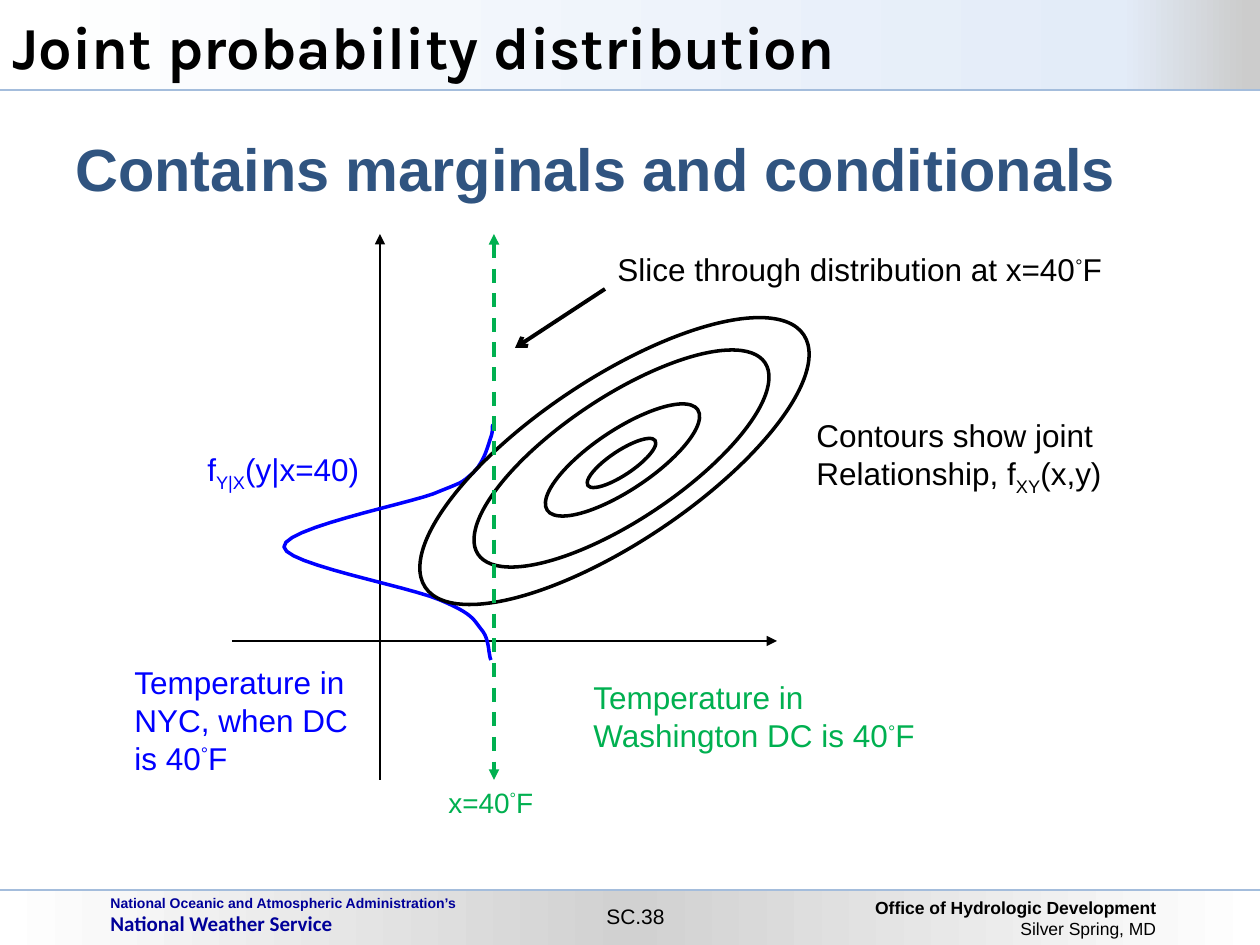
from copy import deepcopy

from lxml import etree
from pptx import Presentation
from pptx import util as u
from pptx.dml.color import RGBColor
from pptx.enum import dml, shapes, text
from pptx.oxml.ns import qn

SCALE = u.Inches(1) / 126
BLACK, BLUE, GREEN, NAVY = "000000", "0000FF", "00B050", "000099"
SUPER, SUB = 30000, -25000
DEGREES_F = [("°", {"baseline": SUPER}), ("F", {})]


def px(value):
    return u.Emu(round(value * SCALE))


def place(box, left, top, width, height):
    """Turn a rectangle relative to box into EMU."""
    return px(box[0] + left), px(box[1] + top), px(width), px(height)


def colour(hex_value):
    return RGBColor.from_string(hex_value)


def write(frame, paragraphs, size, hex_value, align=text.PP_ALIGN.LEFT, **defaults):
    """Fill a frame; each paragraph is a list of (text, format values) runs."""
    for index, runs in enumerate(paragraphs):
        paragraph = frame.paragraphs[0] if index == 0 else frame.add_paragraph()
        paragraph.alignment = align
        for words, changes in runs:
            run = paragraph.add_run()
            run.text = words
            values = {"name": "Arial", "size": u.Pt(size), **defaults, **changes}
            baseline = values.pop("baseline", None)
            for name, value in values.items():
                setattr(run.font, name, value)
            run.font.color.rgb = colour(hex_value)
            if baseline:
                run._r.get_or_add_rPr().set("baseline", str(baseline))


def add_text(slide, where, paragraphs, size, hex_value, frame_format=None, **defaults):
    frame = slide.shapes.add_textbox(*where).text_frame
    values = {"word_wrap": False, "auto_size": text.MSO_AUTO_SIZE.SHAPE_TO_FIT_TEXT}
    for name, value in {**values, **(frame_format or {})}.items():
        setattr(frame, name, value)
    write(frame, paragraphs, size, hex_value, **defaults)


def add_line(slide, box, start, end, hex_value, width, head=None, tail=None, dash=None):
    ends = [px(offset + value) for point in (start, end) for offset, value in zip(box, point)]
    connector = slide.shapes.add_connector(shapes.MSO_CONNECTOR.STRAIGHT, *ends)
    connector.line.color.rgb = colour(hex_value)
    connector.line.width = u.Pt(width)
    if dash:
        connector.line.dash_style = dash
    outline = connector.line._get_or_add_ln()
    for tag, kind in (("a:headEnd", head), ("a:tailEnd", tail)):
        if kind:
            etree.SubElement(outline, qn(tag)).set("type", kind)
    etree.SubElement(connector._element.spPr, qn("a:effectLst"))


def add_band(slide, where, stops):
    """Add a borderless rectangle with a left-to-right gradient."""
    band = slide.shapes.add_shape(shapes.MSO_SHAPE.RECTANGLE, *where)
    band.shadow.inherit = False
    band.line.fill.background()
    band.fill.gradient()
    band.fill.gradient_angle = 0
    stop_list = band._element.spPr.find(qn("a:gradFill")).find(qn("a:gsLst"))
    while len(stop_list) < len(stops):
        stop_list.append(deepcopy(stop_list[-1]))
    for stop, (position, hex_value) in zip(band.fill.gradient_stops, stops):
        stop.position = position
        stop.color.rgb = colour(hex_value)


def add_footer(slide, box):
    width = box[2]
    add_line(slide, box, (width, 1), (0, 1), "A4BDDC", 0.75)
    add_band(slide, place(box, 0, 2, width, 55), [(0, "FFFFFF"), (0.5, "D1D1D1"), (1, "FFFFFF")])
    add_text(slide, place(box, 868, 2, 294, 55),
             [[("Office of Hydrologic Development", {"bold": True})], [("Silver Spring, MD", {})]],
             10, BLACK, {"word_wrap": True, "auto_size": text.MSO_AUTO_SIZE.NONE,
                         "margin_left": px(1), "margin_right": px(6)},
             align=text.PP_ALIGN.RIGHT)
    add_text(slide, place(box, 98, -1, 420, 54),
             [[("National Oceanic and Atmospheric Administration’s", {})],
              [("National Weather Service", {"name": "Calibri", "size": u.Pt(12)})]],
             8, NAVY, {"word_wrap": True}, bold=True)
    add_text(slide, place(box, 592, 8, 87, 38), [[("SC.38", {})]], 12, BLACK,
             align=text.PP_ALIGN.CENTER)


def add_header(slide, box):
    width, height = box[2:]
    add_band(slide, place(box, 0, 0, width, height),
             [(0, "FFFFFF"), (0.89, "E3ECF8"), (0.99, "CCCCCC")])
    add_line(slide, box, (width, height - 1), (0, height - 1), "A4BDDC", 0.75)


def add_title(slide, box):
    add_text(slide, place(box, 0, 0, *box[2:]), [[("Joint probability distribution", {})]],
             34, BLACK, {"word_wrap": True, "auto_size": text.MSO_AUTO_SIZE.NONE,
                         "vertical_anchor": text.MSO_ANCHOR.MIDDLE}, name="Karla", bold=True)


def add_body(slide, box):
    body = slide.shapes.add_shape(shapes.MSO_SHAPE.RECTANGLE, *place(box, 0, 0, *box[2:]))
    body.shadow.inherit = False
    body.fill.solid()
    body.fill.fore_color.rgb = colour("FFFFFF")
    body.line.fill.background()
    body.text_frame.vertical_anchor = text.MSO_ANCHOR.TOP
    write(body.text_frame, [[("Contains marginals and conditionals", {})]], 34, "305480", bold=True)


def bezier_points(start, segments, steps=12):
    """Sample a chain of cubic segments, each (control, control, end)."""
    for first, second, end in segments:
        for step in range(1, steps + 1):
            t = step / steps
            weights = ((1 - t) ** 3, 3 * t * (1 - t) ** 2, 3 * t * t * (1 - t), t ** 3)
            yield tuple(sum(w * point[axis] for w, point in zip(weights, (start, first, second, end)))
                        for axis in (0, 1))
        start = end


def add_density_curve(slide, box):
    start = (371, 430)
    segments = [((368, 424), (370, 409), (361, 399)), ((353, 389), (353, 384), (320, 370)),
                ((287, 356), (165, 334), (164, 317)), ((162, 299), (282, 275), (313, 264)),
                ((345, 251), (340, 254), (353, 243)), ((365, 231), (368, 215), (371, 207)),
                ((374, 198), (371, 195), (374, 195))]
    points = [(px(box[0] + x), px(box[1] + y))
              for x, y in [start, *bezier_points(start, segments)]]
    builder = slide.shapes.build_freeform(*points[0])
    builder.add_line_segments(points[1:], close=False)
    curve = builder.convert_to_shape()
    curve.shadow.inherit = False
    curve.fill.background()
    curve.line.color.rgb = colour(BLUE)
    curve.line.width = u.Pt(2)


def add_contour(slide, where, filled=True):
    contour = slide.shapes.add_shape(shapes.MSO_SHAPE.OVAL, *where)
    contour.shadow.inherit = False
    contour.rotation = 326.3
    if filled:
        contour.fill.solid()
        contour.fill.fore_color.rgb = colour("FFFFFF")
    else:
        contour.fill.background()
    contour.line.color.rgb = colour(BLACK)
    contour.line.width = u.Pt(2)


def add_diagram(slide, box):
    add_line(slide, box, (260, 4), (260, 550), BLACK, 0.75, head="triangle")
    add_line(slide, box, (112, 411), (657, 411), BLACK, 0.75, tail="triangle")
    add_density_curve(slide, box)
    for contour in ((329, 167, 345, 123), (412, 200, 181, 60), (461, 221, 81, 24)):
        add_contour(slide, place(box, *contour))
    add_contour(slide, place(box, 267, 149, 455, 164), filled=False)
    add_line(slide, box, (374, 4), (374, 550), GREEN, 2, "triangle", "triangle",
             dml.MSO_LINE.DASH)
    add_line(slide, box, (485, 59), (395, 118), BLACK, 2.25, tail="arrow")

    labels = [
        ((461, 442, 354, 89), GREEN, 18,
         [[("Temperature in", {})], [("Washington DC is 40", {}), *DEGREES_F]]),
        ((2, 427, 247, 127), BLUE, 18,
         [[("Temperature in", {})], [("NYC, when DC", {})], [("is 40", {}), *DEGREES_F]]),
        ((684, 180, 318, 89), BLACK, 18,
         [[("Contours show joint", {})],
          [("Relationship, f", {}), ("XY", {"baseline": SUB}), ("(x,y)", {})]]),
        ((485, 14, 519, 89), BLACK, 18,
         [[("Slice through distribution at x=40", {}), *DEGREES_F]]),
        ((316, 549, 116, 47), GREEN, 16, [[("x=40", {}), *DEGREES_F]]),
    ]
    for where, hex_value, size, paragraphs in labels:
        add_text(slide, place(box, *where), paragraphs, size, hex_value)
    add_text(slide, place(box, 75, 214, 192, 50),
             [[("f", {}), ("Y|X", {"baseline": SUB}), ("(y|x=40)", {})]],
             18, BLUE, {"word_wrap": True})


def main():
    presentation = Presentation()
    presentation.slide_width, presentation.slide_height = px(1260), px(945)
    slide = presentation.slides.add_slide(presentation.slide_layouts[6])
    add_footer(slide, (0, 889, 1260, 56))
    add_header(slide, (0, 0, 1260, 91))
    add_body(slide, (63, 126, 1197, 714))
    add_title(slide, (0, 0, 1260, 91))
    add_diagram(slide, (120, 230, 1004, 597))
    presentation.save("out.pptx")


if __name__ == "__main__":
    main()
